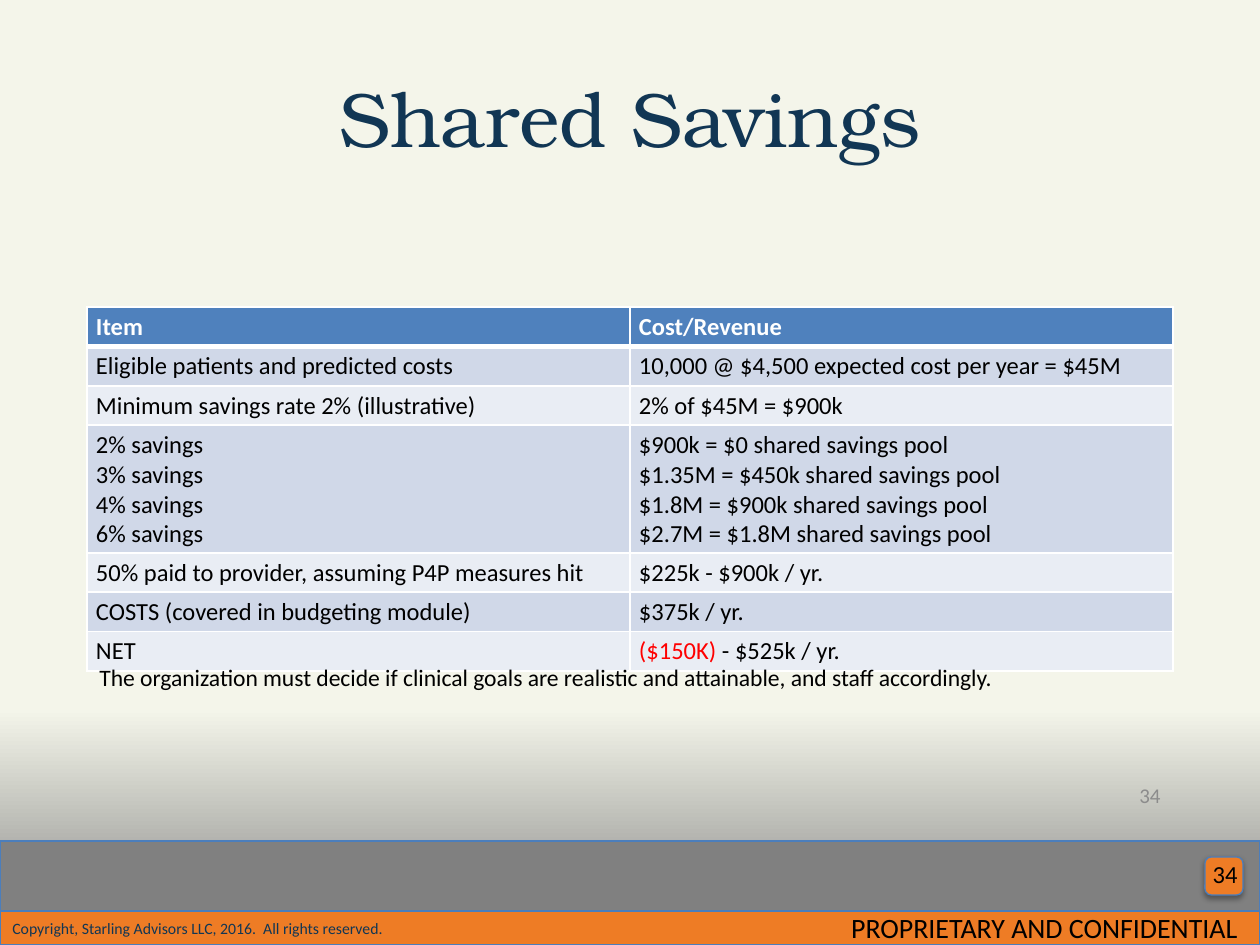
from dataclasses import dataclass

from lxml.etree import SubElement as Sub
from pptx import Presentation
from pptx.dml.color import RGBColor as RGB
from pptx.enum.shapes import MSO_SHAPE as Shape
from pptx.enum.text import MSO_ANCHOR as Anchor, MSO_AUTO_SIZE as Auto, PP_ALIGN as Align
from pptx.oxml.ns import qn
from pptx.util import Emu, Pt

SCALE = 914400 / 126


def px(num):
    return Emu(round(num * SCALE))


@dataclass(frozen=True)
class Theme:
    # Colours
    paper: str = "F4F5EA"
    gray: str = "808080"
    navy: str = "113654"
    orange: str = "EE7C25"
    edge: str = "4B7EBC"
    head: str = "4F81BD"
    odd: str = "D0D8E8"
    even: str = "E9EDF4"
    white: str = "FFFFFF"
    black: str = "000000"
    red: str = "FF0000"
    faint: str = "8C8C8C"
    # Fonts and sizes
    body: str = "Calibri"
    serif: str = "TeX Gyre Bonum"
    title: float = 44
    label: float = 16
    cell: float = 14
    note: float = 13.5
    page: float = 12
    legal: float = 9


class Deck:
    def __init__(self, theme):
        self.theme = theme
        self.prs = Presentation()
        self.prs.slide_width, self.prs.slide_height = px(1260), px(945)
        self.slide = self.prs.slides.add_slide(self.prs.slide_layouts[5])

    def style(self, para, size, color, align=None, face=None, bold=False):
        para.alignment = align
        font = para.font
        font.name, font.size, font.bold = face or self.theme.body, Pt(size), bold
        font.color.rgb = RGB.from_string(color)

    def backdrop(self, top, low):
        fill = self.slide.background.fill
        fill.gradient()
        fill.gradient_angle = 270
        for stop, color, pos in zip(fill.gradient_stops, (top, low), (0.75, 1)):
            stop.color.rgb = RGB.from_string(color)
            stop.position = pos

    def title(self, text, box):
        item = self.slide.shapes.title
        item.left, item.top, item.width, item.height = map(px, box)
        frame = item.text_frame
        frame.text = text
        frame.vertical_anchor = Anchor.MIDDLE
        self.style(frame.paragraphs[0], self.theme.title, self.theme.navy,
                   Align.CENTER, self.theme.serif)

    def block(self, box, color, kind=Shape.RECTANGLE):
        item = self.slide.shapes.add_shape(kind, *map(px, box))
        item.fill.solid()
        item.fill.fore_color.rgb = RGB.from_string(color)
        item.line.color.rgb = RGB.from_string(self.theme.edge)
        item.line.width = Pt(0.75)
        # Soft shadow straight below
        item.shadow.inherit = False
        glow = Sub(item._element.spPr.find(qn("a:effectLst")), qn("a:outerShdw"),
                   blurRad=str(Pt(3.1)), dist=str(Pt(1.8)), dir="5400000", rotWithShape="0")
        tint = Sub(glow, qn("a:srgbClr"), val=self.theme.black)
        Sub(tint, qn("a:alpha"), val="35000")
        return item

    def text(self, text, box, size, color, align=Align.LEFT, anchor=Anchor.TOP, grow=False):
        frame = self.slide.shapes.add_textbox(*map(px, box)).text_frame
        frame.word_wrap = True
        frame.vertical_anchor = anchor
        if grow:
            frame.auto_size = Auto.SHAPE_TO_FIT_TEXT
        frame.text = text
        self.style(frame.paragraphs[0], size, color, align)

    def border(self, cell, low):
        props = cell._tc.get_or_add_tcPr()
        for side, wide in (("L", 1), ("R", 1), ("T", 1), ("B", low)):
            line = Sub(props, qn(f"a:ln{side}"), w=str(Pt(wide)))
            Sub(Sub(line, qn("a:solidFill")), qn("a:srgbClr"), val=self.theme.white)

    def table(self, rows, box, step, line):
        look = self.theme
        grid = self.slide.shapes.add_table(len(rows), len(rows[0]), *map(px, box)).table
        for r, row in enumerate(rows):
            extra = max(text.count("\n") for text in row)
            grid.rows[r].height = px(step + extra * line)
            fill = look.head if r == 0 else look.odd if r % 2 else look.even
            for c, text in enumerate(row):
                cell = grid.cell(r, c)
                self.border(cell, 3 if r == 0 else 1)
                cell.fill.solid()
                cell.fill.fore_color.rgb = RGB.from_string(fill)
                cell.margin_left = cell.margin_right = px(9)
                cell.margin_top = cell.margin_bottom = px(5)
                cell.text = text
                for para in cell.text_frame.paragraphs:
                    self.style(para, look.cell, look.black if r else look.white, bold=r == 0)
        return grid


ROWS = [
    ("Item", "Cost/Revenue"),
    ("Eligible patients and predicted costs", "10,000 @ $4,500 expected cost per year = $45M"),
    ("Minimum savings rate 2% (illustrative)", "2% of $45M = $900k"),
    ("2% savings\n3% savings\n4% savings\n6% savings",
     "$900k = $0 shared savings pool\n$1.35M = $450k shared savings pool\n"
     "$1.8M = $900k shared savings pool\n$2.7M = $1.8M shared savings pool"),
    ("50% paid to provider, assuming P4P measures hit", "$225k - $900k / yr."),
    ("COSTS (covered in budgeting module)", "$375k / yr."),
    ("NET", ""),
]


def main():
    look = Theme()
    deck = Deck(look)
    deck.backdrop(look.paper, look.gray)

    # Footer bands and page badge
    deck.block((0, 841, 1260, 104), look.gray)
    strip = deck.block((0, 911, 1260, 34), look.orange).text_frame
    strip.text = "Copyright, Starling Advisors LLC, 2016.  All rights reserved."
    strip.vertical_anchor = Anchor.MIDDLE
    deck.style(strip.paragraphs[0], look.legal, look.navy, Align.LEFT)
    deck.block((1205, 857, 38, 38), look.orange, Shape.ROUNDED_RECTANGLE)
    deck.text("34", (1184, 853, 66, 50), look.cell, look.black, Align.RIGHT)
    deck.text("PROPRIETARY AND CONFIDENTIAL", (685, 904, 565, 47),
              look.label, look.black, Align.RIGHT, grow=True)

    # Title and page number
    deck.title("Shared Savings", (63, 38, 1134, 158))
    deck.text("34", (890, 776, 283, 38), look.page, look.faint, Align.RIGHT, Anchor.MIDDLE)

    # Savings table, with the loss in red
    grid = deck.table(ROWS, (87, 307, 1086, 360), 38, 28)
    net = grid.cell(len(ROWS) - 1, 1).text_frame.paragraphs[0]
    loss = net.add_run()
    loss.text = "($150K)"
    loss.font.color.rgb = RGB.from_string(look.red)
    net.add_run().text = " - $525k / yr."

    # Closing note
    deck.text("The organization must decide if clinical goals are realistic and attainable, "
              "and staff accordingly.", (87, 657, 1086, 42), look.note, look.black, grow=True)

    deck.prs.save("out.pptx")


if __name__ == "__main__":
    main()
